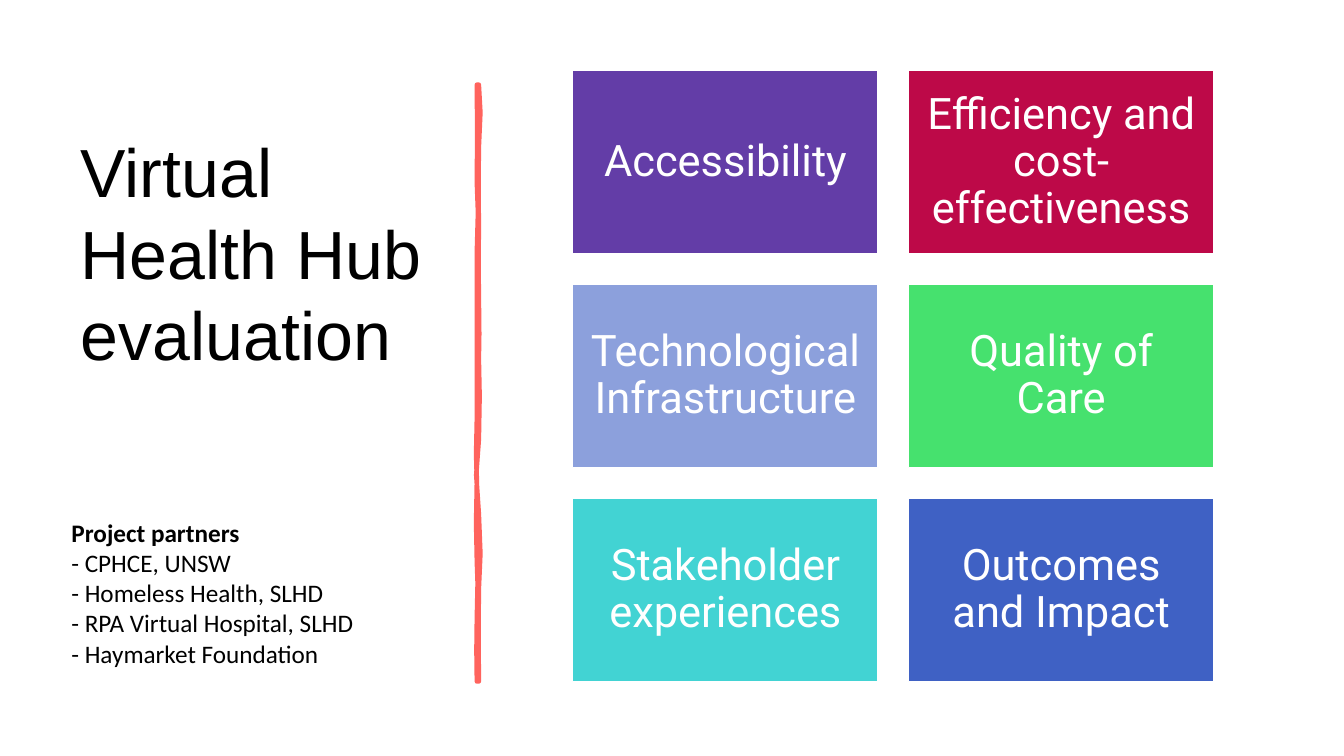
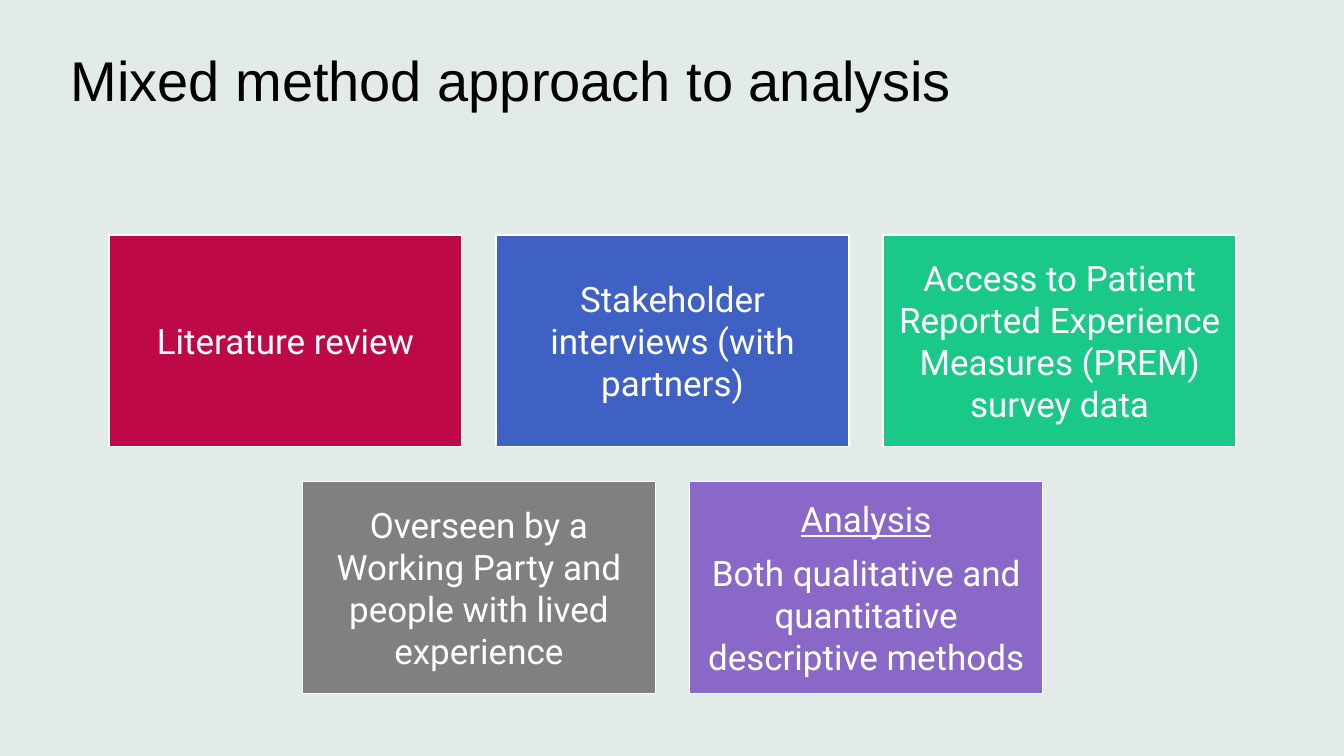
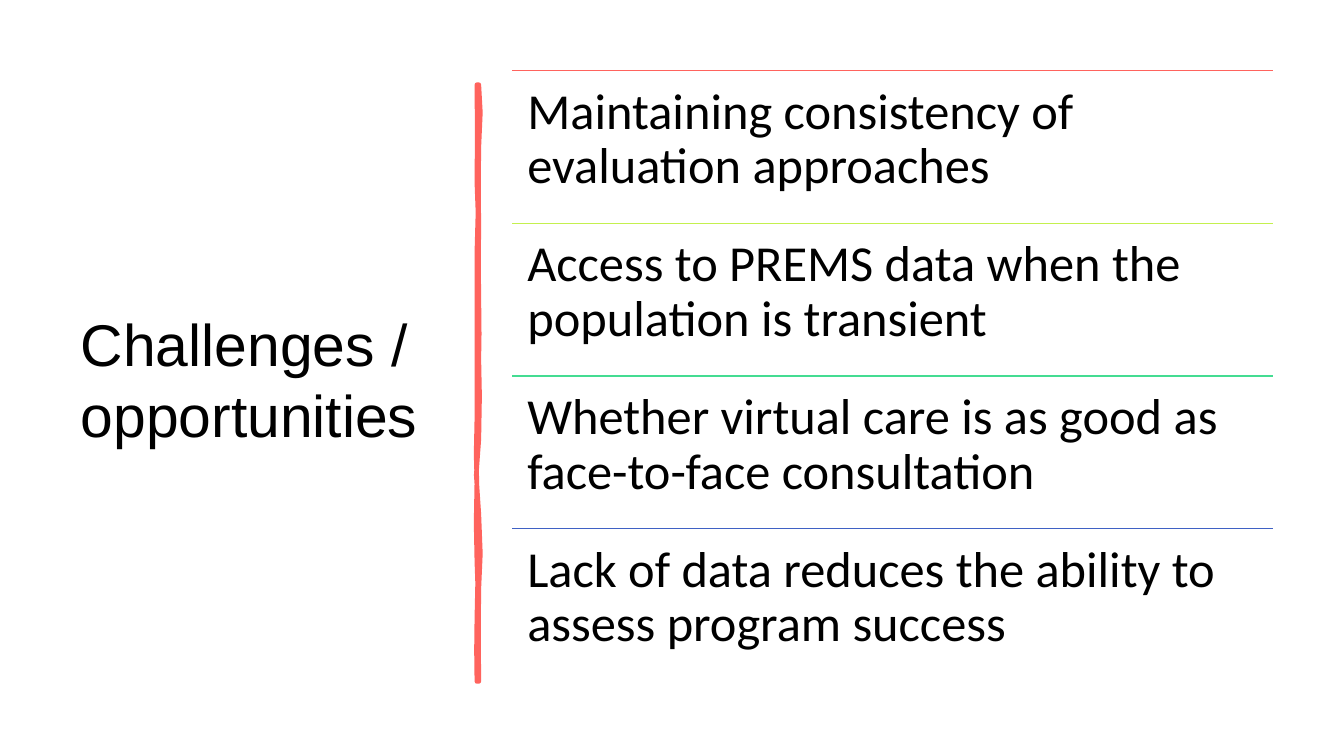
from lxml import etree
from pptx import Presentation
from pptx.dml.color import RGBColor
from pptx.enum.shapes import MSO_CONNECTOR, MSO_SHAPE
from pptx.enum.text import MSO_ANCHOR, MSO_AUTO_SIZE, PP_ALIGN
from pptx.oxml.ns import qn
from pptx.util import Inches, Pt

RECTANGLE = MSO_SHAPE.RECTANGLE
STRAIGHT = MSO_CONNECTOR.STRAIGHT
TOP, MIDDLE = MSO_ANCHOR.TOP, MSO_ANCHOR.MIDDLE
LEFT, CENTER = PP_ALIGN.LEFT, PP_ALIGN.CENTER
NO_AUTOFIT = MSO_AUTO_SIZE.NONE

BLACK = RGBColor(0x00, 0x00, 0x00)
WHITE = RGBColor(0xFF, 0xFF, 0xFF)
PALE_GREY = RGBColor(0xF2, 0xF2, 0xF2)
DEEP_GREEN = RGBColor(0x13, 0x97, 0x65)
CORAL = RGBColor(0xFF, 0x63, 0x5D)
VIOLET = RGBColor(0x63, 0x3D, 0xA7)
LILAC = RGBColor(0x8A, 0x68, 0xC8)
CRIMSON = RGBColor(0xBD, 0x09, 0x48)
PERIWINKLE = RGBColor(0x8C, 0xA0, 0xDC)
BRIGHT_GREEN = RGBColor(0x46, 0xE1, 0x6E)
EMERALD = RGBColor(0x1A, 0xC9, 0x87)
MINT = RGBColor(0x44, 0xDC, 0x92)
LIME = RGBColor(0xC4, 0xF0, 0x4E)
TURQUOISE = RGBColor(0x42, 0xD3, 0xD3)
BLUE = RGBColor(0x3F, 0x61, 0xC4)
GREY = RGBColor(0x80, 0x80, 0x80)

TITLE_FONT, BODY_FONT, CARD_FONT = "Arial", "Calibri", "Roboto"
SLIDE_WIDTH, SLIDE_HEIGHT = 13.33, 7.5

# Hand-drawn divider: start point, then two controls and an end per curve
STROKE_START = (4.75, 0.84)
STROKE_CURVES = [
    (4.77, 1.02, 4.77, 1.19, 4.75, 1.46), (4.73, 1.73, 4.76, 1.95, 4.75, 2.26),
    (4.74, 2.57, 4.75, 2.62, 4.75, 2.94), (4.74, 3.25, 4.77, 3.42, 4.75, 3.56),
    (4.73, 3.7, 4.79, 4.14, 4.75, 4.36), (4.71, 4.57, 4.72, 4.84, 4.75, 5.1),
    (4.77, 5.36, 4.77, 5.64, 4.75, 5.84), (4.73, 6.03, 4.76, 6.5, 4.75, 6.76),
    (4.74, 6.76, 4.73, 6.76, 4.73, 6.76), (4.74, 6.46, 4.71, 6.44, 4.73, 6.13),
    (4.74, 5.83, 4.74, 5.7, 4.73, 5.57), (4.72, 5.44, 4.72, 4.95, 4.73, 4.77),
    (4.73, 4.59, 4.71, 4.45, 4.73, 4.15), (4.74, 3.86, 4.72, 3.73, 4.73, 3.35),
    (4.74, 2.98, 4.72, 2.81, 4.73, 2.5), (4.74, 2.18, 4.75, 2, 4.73, 1.81),
    (4.7, 1.63, 4.77, 1.04, 4.73, 0.84), (4.74, 0.84, 4.74, 0.84, 4.75, 0.84),
]


def curve_points(start, curves):
    """Middle and end point of each cubic curve in a chain, as lengths."""
    points = []
    x0, y0 = start
    for x1, y1, x2, y2, x3, y3 in curves:
        middle_x = (x0 + 3 * x1 + 3 * x2 + x3) / 8
        middle_y = (y0 + 3 * y1 + 3 * y2 + y3) / 8
        points += [(Inches(middle_x), Inches(middle_y)), (Inches(x3), Inches(y3))]
        x0, y0 = x3, y3
    return points


class Deck:
    def __init__(self):
        self.prs = Presentation()
        self.prs.slide_width = Inches(SLIDE_WIDTH)
        self.prs.slide_height = Inches(SLIDE_HEIGHT)
        self.slide = None

    def new_slide(self):
        self.slide = self.prs.slides.add_slide(self.prs.slide_layouts[5])
        fill = self.slide.background.fill
        fill.solid()
        fill.fore_color.rgb = WHITE

    def style_paragraph(self, paragraph, font, size, color, align=LEFT, spacing=1.0):
        paragraph.alignment = align
        paragraph.line_spacing = spacing
        paragraph.font.name = font
        paragraph.font.size = Pt(size)
        paragraph.font.color.rgb = color

    def set_frame(self, frame, anchor, inset=None):
        frame.word_wrap = True
        frame.auto_size = NO_AUTOFIT
        frame.vertical_anchor = anchor
        if inset is not None:
            frame.margin_left = frame.margin_right = Inches(inset)
            frame.margin_top = frame.margin_bottom = Inches(inset)

    def rectangle(self, color, left, top, width, height):
        rectangle = self.slide.shapes.add_shape(
            RECTANGLE, Inches(left), Inches(top), Inches(width), Inches(height))
        rectangle.shadow.inherit = False
        rectangle.fill.solid()
        rectangle.fill.fore_color.rgb = color
        return rectangle

    def backdrop(self, layers):
        """Full-slide layers behind everything, as (colour, opacity percent)."""
        tree = self.slide.shapes._spTree
        for depth, (color, opacity) in enumerate(layers):
            layer = self.rectangle(color, 0, 0, SLIDE_WIDTH, SLIDE_HEIGHT)
            layer.line.fill.background()
            if opacity < 100:
                rgb = layer._element.spPr.find(".//" + qn("a:srgbClr"))
                etree.SubElement(rgb, qn("a:alpha"), val=str(opacity * 1000))
            tree.insert(2 + depth, layer._element)

    def title(self, text, left, top, width, height, size, anchor=MIDDLE):
        title = self.slide.shapes.title
        title.left, title.top = Inches(left), Inches(top)
        title.width, title.height = Inches(width), Inches(height)
        self.set_frame(title.text_frame, anchor)
        title.text_frame.text = text
        self.style_paragraph(title.text_frame.paragraphs[0], TITLE_FONT, size, BLACK)

    def card(self, text, color, left, top, width, height, size, inset, spacing=1.0):
        card = self.rectangle(color, left, top, width, height)
        card.line.color.rgb = WHITE
        card.line.width = Pt(1)
        self.set_frame(card.text_frame, MIDDLE, inset)
        card.text_frame.text = text
        for index, paragraph in enumerate(card.text_frame.paragraphs):
            self.style_paragraph(paragraph, CARD_FONT, size, WHITE, CENTER, spacing)
            if index:
                paragraph.space_before = Pt(0.35 * size)
        return card

    def text(self, text, left, top, width, height, size, inset=None, spacing=1.0):
        box = self.slide.shapes.add_textbox(
            Inches(left), Inches(top), Inches(width), Inches(height))
        self.set_frame(box.text_frame, TOP, inset)
        paragraph = box.text_frame.paragraphs[0]
        paragraph.text = text
        self.style_paragraph(paragraph, BODY_FONT, size, BLACK, spacing=spacing)
        return paragraph

    def rule(self, color, left, right, y):
        rule = self.slide.shapes.add_connector(
            STRAIGHT, Inches(left), Inches(y), Inches(right), Inches(y))
        rule.line.color.rgb = color
        rule.line.width = Pt(1)
        etree.SubElement(rule._element.spPr, qn("a:effectLst"))

    def divider(self):
        builder = self.slide.shapes.build_freeform(*map(Inches, STROKE_START), scale=1.0)
        builder.add_line_segments(curve_points(STROKE_START, STROKE_CURVES), close=True)
        stroke = builder.convert_to_shape()
        stroke.shadow.inherit = False
        stroke.fill.solid()
        stroke.fill.fore_color.rgb = CORAL
        stroke.line.color.rgb = CORAL
        stroke.line.width = Pt(3.25)


def evaluation_slide(deck):
    deck.new_slide()
    deck.title("Virtual Health Hub evaluation", 0.7, 0.7, 3.74, 3.6, 48.6)
    deck.divider()

    # Evaluation themes, two columns
    themes = [
        ("Accessibility", VIOLET),
        ("Efficiency and cost-effectiveness", CRIMSON),
        ("Technological Infrastructure", PERIWINKLE),
        ("Quality of Care", BRIGHT_GREEN),
        ("Stakeholder experiences", TURQUOISE),
        ("Outcomes and Impact", BLUE),
    ]
    width, height, gap = 3.03, 1.82, 0.3
    for index, (theme, color) in enumerate(themes):
        row, column = divmod(index, 2)
        deck.card(theme, color, 5.68 + column * (width + gap), 0.7 + row * (height + gap),
                  width, height, 31, 0.13, 0.9)

    # Partners, one paragraph with line breaks
    partners = ["Project partners", "- CPHCE, UNSW", "- Homeless Health, SLHD",
                "- RPA Virtual Hospital, SLHD", "- Haymarket Foundation"]
    paragraph = deck.text("\v".join(partners), 0.61, 5.08, 3.42, 1.62, 18)
    paragraph.runs[0].font.bold = True


def methods_slide(deck):
    deck.new_slide()
    deck.backdrop([(PALE_GREY, 100), (DEEP_GREEN, 7)])
    deck.title("Mixed method approach to analysis", 0.6, 0.4, 12.13, 1.45, 40, TOP)

    # Methods: three cards above two, each row centred
    rows = [
        [("Literature review", CRIMSON),
         ("Stakeholder interviews (with partners)", BLUE),
         ("Access to Patient Reported Experience Measures (PREM) survey data", EMERALD)],
        [("Overseen by a Working Party and people with lived experience", GREY),
         ("Analysis\nBoth qualitative and quantitative descriptive methods", LILAC)],
    ]
    width, height = 3.5, 2.1
    column_pitch, row_pitch, center = 3.84, 2.45, 6.67
    for row, methods in enumerate(rows):
        left = center - (width + (len(methods) - 1) * column_pitch) / 2
        for column, (method, color) in enumerate(methods):
            card = deck.card(method, color, left + column * column_pitch,
                             2.33 + row * row_pitch, width, height, 25, 0.1)
    analysis_heading = card.text_frame.paragraphs[0]
    analysis_heading.font.underline = True


def challenges_slide(deck):
    deck.new_slide()
    deck.title("Challenges / opportunities", 0.7, 0.7, 3.74, 6.11, 42)
    deck.divider()

    # Ruled list of challenges
    challenges = [
        ("Maintaining consistency of evaluation approaches", CORAL),
        ("Access to PREMS data when the population is transient", LIME),
        ("Whether virtual care is as good as face-to-face consultation", MINT),
        ("Lack of data reduces the ability to assess program success", BLUE),
    ]
    left, width, list_height = 5.08, 7.55, 6.06
    pitch = list_height / len(challenges)
    for index, (challenge, color) in enumerate(challenges):
        top = 0.7 + index * pitch
        deck.rule(color, left, left + width, top)
        deck.text(challenge, left, top, width, pitch, 36, 0.15, 0.9)


def main():
    deck = Deck()
    evaluation_slide(deck)
    methods_slide(deck)
    challenges_slide(deck)
    deck.prs.save("out.pptx")


if __name__ == "__main__":
    main()
